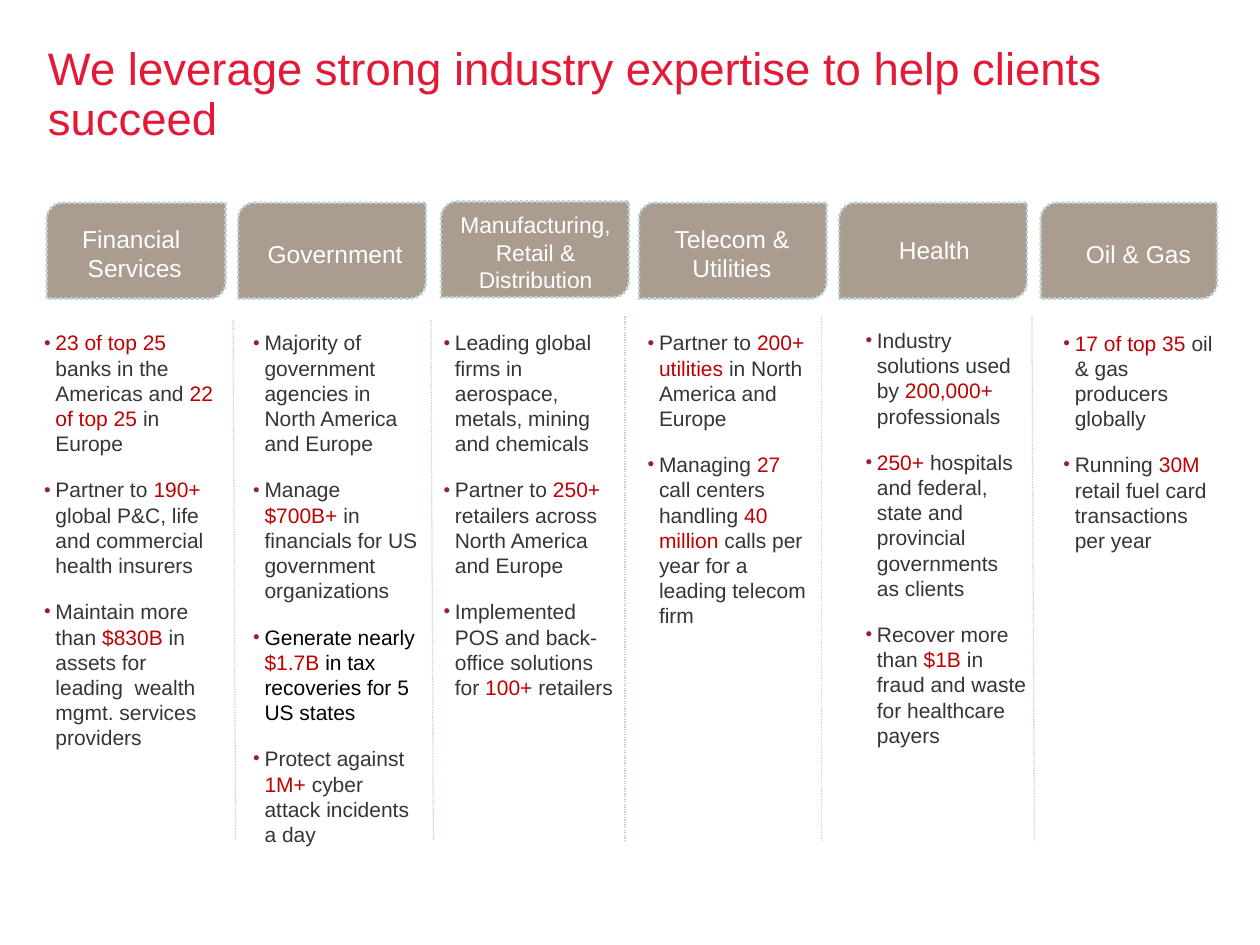
from lxml.etree import SubElement
from pptx import Presentation
from pptx.dml.color import RGBColor
from pptx.enum.dml import MSO_LINE
from pptx.enum.shapes import MSO_CONNECTOR, MSO_SHAPE
from pptx.enum.text import MSO_ANCHOR, PP_ALIGN
from pptx.oxml.ns import qn
from pptx.util import Inches, Pt

FONT = "Arial"
RED = RGBColor(0xE3, 0x19, 0x37)
TAUPE = RGBColor(0xAA, 0x9C, 0x8F)
PALE_BLUE = RGBColor(0xBA, 0xD4, 0xD9)
WHITE = RGBColor(0xFF, 0xFF, 0xFF)
BLACK = RGBColor(0, 0, 0)
DARK_GREY = RGBColor(0x36, 0x35, 0x34)
HIGHLIGHT = RGBColor(0xC0, 0, 0)
BULLET = RGBColor(0x96, 0x1E, 0x3C)

TITLE = "We leverage strong industry expertise to help clients succeed"

# Asterisks enclose highlighted figures.
INDUSTRIES = [
    {"name": ["Financial ", "Services"], "size": 14,
     "tab": (0.37, 1.61, 1.42), "label": (0.13, 1.68, 1.88),
     "body": (0.35, 2.57, 1.39, 3.47), "right_inset": 0.04,
     "points": ["*23 of top 25 *banks in the Americas and *22 of top 25 *in Europe",
                "Partner to *190+* global P&C, life and commercial health insurers",
                "Maintain more than* $830B* in assets for leading  wealth mgmt. "
                "services providers"]},
    {"name": ["Government"], "size": 14,
     "tab": (1.89, 1.61, 1.49), "label": (1.94, 1.68, 1.44),
     "body": (2.01, 2.57, 1.33, 4.24), "right_inset": 0.02, "black_point": 2,
     "points": ["Majority of government agencies in North America and Europe",
                "Manage *$700B+ *in financials for US government organizations",
                "Generate nearly *$1.7B *in tax recoveries for 5 US states",
                "Protect against *1M+* cyber attack incidents a day"]},
    {"name": ["Manufacturing, Retail &", "Distribution"], "size": 13,
     "tab": (3.5, 1.6, 1.49), "label": (3.5, 1.67, 1.5),
     "body": (3.52, 2.57, 1.41, 3.43), "right_inset": 0.04,
     "points": ["Leading global firms in aerospace, metals, mining and chemicals",
                "Partner to *250+ *retailers across North America and Europe",
                "Implemented POS and back-office solutions for *100+* retailers"]},
    {"name": ["Telecom &", "Utilities"], "size": 14,
     "tab": (5.07, 1.61, 1.49), "label": (5.08, 1.68, 1.46),
     "body": (5.14, 2.57, 1.32, 2.86), "right_inset": 0.04,
     "points": ["Partner to *200+ utilities* in North America and Europe",
                "Managing *27 *call centers handling *40 million* calls per year "
                "for a leading telecom firm"]},
    {"name": ["Health"], "size": 14,
     "tab": (6.66, 1.61, 1.49), "label": (6.72, 1.65, 1.39),
     "body": (6.87, 2.55, 1.3, 3.47), "right_inset": 0.02,
     "points": ["Industry solutions used by *200,000+ *professionals",
                "*250+* hospitals and federal, state and provincial governments\n"
                "as clients",
                "Recover more than *$1B *in fraud and waste for healthcare payers"]},
    {"name": ["Oil & Gas"], "size": 14,
     "tab": (8.26, 1.61, 1.4), "label": (8.21, 1.68, 1.65),
     "body": (8.44, 2.57, 1.25, 1.89), "right_inset": 0.04,
     "points": ["*17 of top 35 *oil & gas producers globally",
                "Running *30M* retail fuel card transactions per year"]},
]
TAB_HEIGHT, LABEL_HEIGHT = 0.76, 0.66
DIVIDERS = [(1.85, 2.54, 1.87), (3.42, 2.54, 3.44), (4.96, 2.51, 4.96),
            (6.52, 2.51, 6.52), (8.19, 2.51, 8.21)]
DIVIDER_BOTTOM = 6.67


def inches(*values):
    return [Inches(value) for value in values]


def set_font(para, size, colour=None):
    para.font.name = FONT
    para.font.size = Pt(size)
    if colour is not None:
        para.font.color.rgb = colour


def style_line(line, width):
    line.color.rgb = PALE_BLUE
    line.width = Pt(width)
    line.dash_style = MSO_LINE.ROUND_DOT


def add_bullet(para):
    properties = para._p.get_or_add_pPr()
    properties.set("marL", str(Inches(0.09)))
    properties.set("indent", str(-Inches(0.09)))
    colour = SubElement(properties, qn("a:buClr"))
    SubElement(colour, qn("a:srgbClr"), val=str(BULLET))
    SubElement(properties, qn("a:buSzPct"), val="90000")
    SubElement(properties, qn("a:buFont"), typeface=FONT)
    SubElement(properties, qn("a:buChar"), char="•")


def add_tab(page, industry):
    tab = page.shapes.add_shape(MSO_SHAPE.ROUND_2_DIAG_RECTANGLE,
                                *inches(*industry["tab"], TAB_HEIGHT))
    tab.shadow.inherit = False
    tab.fill.solid()
    tab.fill.fore_color.rgb = TAUPE
    style_line(tab.line, 1.5)


def add_label(page, industry):
    box = page.shapes.add_textbox(*inches(*industry["label"], LABEL_HEIGHT))
    frame = box.text_frame
    frame.word_wrap = True
    frame.vertical_anchor = MSO_ANCHOR.MIDDLE
    frame.text = "\n".join(industry["name"])
    for para in frame.paragraphs:
        para.alignment = PP_ALIGN.CENTER
        set_font(para, industry["size"], WHITE)


def add_points(page, industry):
    frame = page.shapes.add_textbox(*inches(*industry["body"])).text_frame
    frame.word_wrap = True
    frame.margin_left = 0
    frame.margin_right = Inches(industry["right_inset"])
    for index, point in enumerate(industry["points"]):
        para = frame.add_paragraph() if index else frame.paragraphs[0]
        add_bullet(para)
        para.space_before = Pt(6 if index else 0)
        para.space_after = Pt(6)
        set_font(para, 12)
        plain = BLACK if index == industry.get("black_point") else DARK_GREY
        for position, part in enumerate(point.split("*")):
            for row, words in enumerate(part.split("\n")):
                if row:
                    para.add_line_break()
                if words:
                    span = para.add_run()
                    span.text = words
                    span.font.color.rgb = HIGHLIGHT if position % 2 else plain


def add_divider(page, top_x, top, bottom_x):
    divider = page.shapes.add_connector(
        MSO_CONNECTOR.STRAIGHT, *inches(top_x, top, bottom_x, DIVIDER_BOTTOM))
    style_line(divider.line, 0.75)
    SubElement(divider._element.spPr, qn("a:effectLst"))


def add_title(page):
    title = page.shapes.title
    title.left, title.top, title.width, title.height = inches(0.28, 0.26, 9.58, 1)
    frame = title.text_frame
    frame.text = TITLE
    frame.vertical_anchor = MSO_ANCHOR.MIDDLE
    para = frame.paragraphs[0]
    para.alignment = PP_ALIGN.LEFT
    para.line_spacing = 0.9
    set_font(para, 26, RED)


def main():
    deck = Presentation()
    deck.slide_width, deck.slide_height = inches(10, 7.5)
    page = deck.slides.add_slide(deck.slide_layouts[5])
    add_title(page)
    for add_part in (add_tab, add_points, add_label):
        for industry in INDUSTRIES:
            add_part(page, industry)
    for divider in DIVIDERS:
        add_divider(page, *divider)
    deck.save("out.pptx")


if __name__ == "__main__":
    main()
